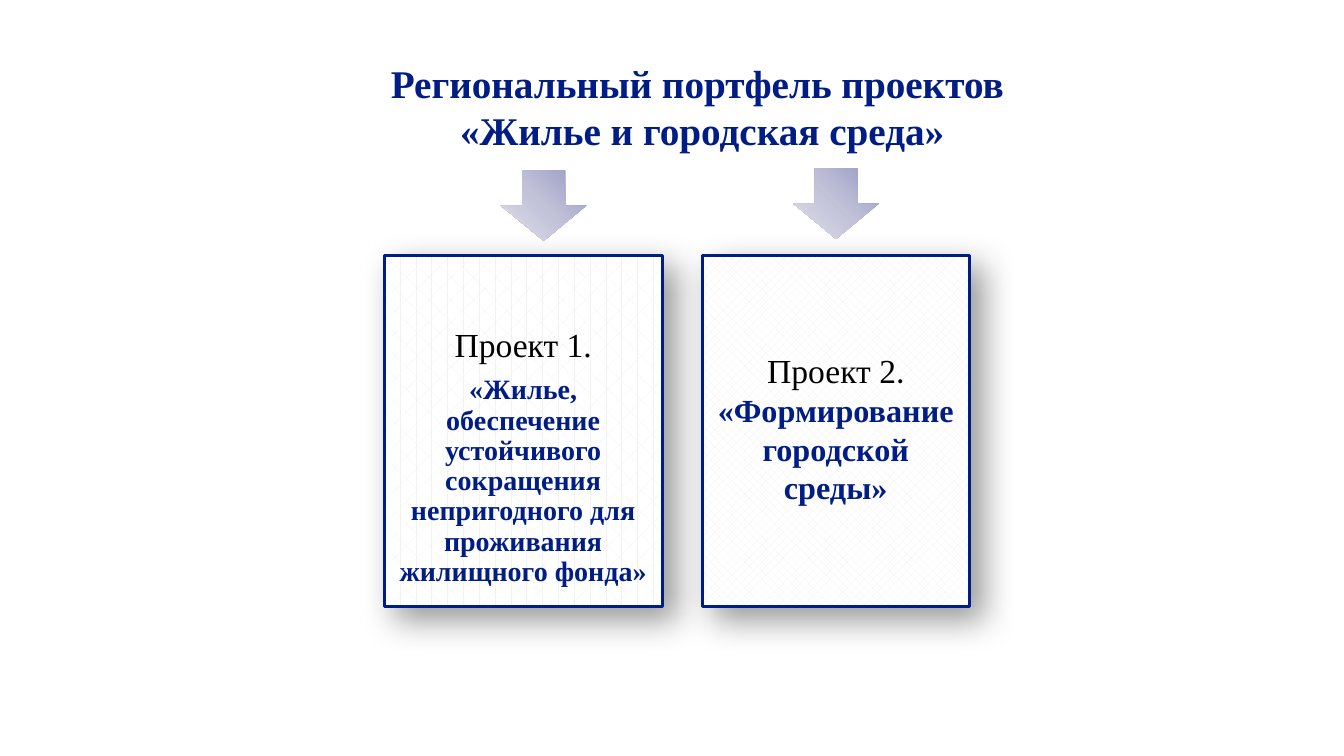
"""Builds the slide on the regional housing project portfolio."""
import copy
import dataclasses

import lxml.etree
import pptx
import pptx.dml.color
import pptx.enum.dml
import pptx.enum.shapes
import pptx.enum.text
import pptx.oxml.ns
import pptx.util

Cm = pptx.util.Cm
Pt = pptx.util.Pt
qn = pptx.oxml.ns.qn
Shapes = pptx.enum.shapes.MSO_SHAPE
Pattern = pptx.enum.dml.MSO_PATTERN
Anchor = pptx.enum.text.MSO_ANCHOR


def rgb(value):
    """Turn a hex string into a colour."""
    return pptx.dml.color.RGBColor.from_string(value)


@dataclasses.dataclass(frozen=True)
class Theme:
    """Colours, fonts and type sizes of the slide."""
    navy: str = "001C85"
    black: str = "000000"
    white: str = "FFFFFF"
    weft: str = "F2F2F2"
    arrow: tuple = ((0, "9799C3"), (0.5, "C1C2D8"), (1, "E1E1EC"))
    serif: str = "Times New Roman"
    sans: str = "Calibri"
    title: int = 28
    label: int = 24


THEME = Theme()
LABEL = {"name": THEME.serif, "size": Pt(THEME.label), "bold": False, "color": THEME.black}
STRONG = {"name": THEME.serif, "bold": True, "color": THEME.navy}


def set_attributes(target, values):
    """Set every attribute named in a dict."""
    for name, value in values.items():
        setattr(target, name, value)


def write_text(frame, paragraphs, **layout):
    """Write centred paragraphs made of (text, font format) spans."""
    for index, spans in enumerate(paragraphs):
        para = frame.paragraphs[0] if index == 0 else frame.add_paragraph()
        set_attributes(para, {"alignment": pptx.enum.text.PP_ALIGN.CENTER, "space_before": Pt(0), **layout})
        for text, font in spans:
            span = para.add_run()
            span.text = text
            set_attributes(span.font, {key: value for key, value in font.items() if key != "color"})
            span.font.color.rgb = rgb(font["color"])


def add_title(page, box, lines):
    """Place the portfolio title in its box."""
    title = page.shapes.title
    set_attributes(title, dict(zip(("left", "top", "width", "height"), map(Cm, box))))
    set_attributes(title.text_frame, {
        "word_wrap": True, "vertical_anchor": Anchor.TOP,
        "auto_size": pptx.enum.text.MSO_AUTO_SIZE.NONE})
    write_text(title.text_frame, [[(line, {**STRONG, "size": Pt(THEME.title)})] for line in lines])


def add_shadow(shape):
    """Give a card its soft shadow to the lower right."""
    shape.shadow.inherit = False
    effects = shape._element.spPr.find(qn("a:effectLst"))
    shadow = lxml.etree.SubElement(
        effects, qn("a:outerShdw"), blurRad=str(Pt(24)), dist=str(Pt(12)),
        dir="2700000", algn="tl", rotWithShape="0")
    color = lxml.etree.SubElement(shadow, qn("a:srgbClr"), val=THEME.black)
    lxml.etree.SubElement(color, qn("a:alpha"), val="40000")


def add_card(page, box, pattern, paragraphs, inset, **layout):
    """Place a patterned project card with its text below a top inset."""
    card = page.shapes.add_shape(Shapes.RECTANGLE, *map(Cm, box))
    card.fill.patterned()
    card.fill.pattern = pattern
    card.fill.fore_color.rgb = rgb(THEME.weft)
    card.fill.back_color.rgb = rgb(THEME.white)
    card.line.color.rgb = rgb(THEME.navy)
    card.line.width = Pt(2.25)
    add_shadow(card)
    set_attributes(card.text_frame, {
        "word_wrap": True, "vertical_anchor": Anchor.TOP, "margin_top": Cm(inset),
        "margin_left": Cm(0.33), "margin_right": Cm(0.33), "margin_bottom": Cm(0.33)})
    write_text(card.text_frame, paragraphs, **layout)


def add_arrow(page, box):
    """Place a gradient arrow pointing down to a card."""
    arrow = page.shapes.add_shape(Shapes.DOWN_ARROW, *map(Cm, box))
    arrow.shadow.inherit = False
    arrow.line.fill.background()
    arrow.fill.gradient()
    arrow.fill.gradient_angle = 225
    stops = arrow._element.spPr.find(".//" + qn("a:gsLst"))
    stops.insert(1, copy.deepcopy(stops[0]))
    for stop, (position, color) in zip(arrow.fill.gradient_stops, THEME.arrow):
        stop.position = position
        stop.color.rgb = rgb(color)


def main():
    """Build and save the deck."""
    deck = pptx.Presentation()
    set_attributes(deck, {"slide_width": Cm(33.87), "slide_height": Cm(19.05)})
    page = deck.slides.add_slide(deck.slide_layouts.get_by_name("Title Only"))
    add_title(page, (3.99, 1.37, 27.41, 2.95),
              ("Региональный портфель проектов ", "«Жилье и городская среда»"))
    card_top, card_height = 6.43, 8.86
    add_card(page, (17.7, card_top, 6.73, card_height), Pattern.WEAVE, [
        [("Проект 2", LABEL), (".", {**LABEL, "name": THEME.sans})],
        [("«Формирование городской среды»", {**STRONG, "size": Pt(23)})],
    ], inset=2.39)
    add_card(page, (9.68, card_top, 7.01, card_height), Pattern.DIVOT, [
        [("Проект 1.", LABEL)],
        [("«Жилье, обеспечение устойчивого сокращения непригодного для проживания жилищного фонда»",
          {**STRONG, "size": Pt(20)})],
    ], inset=1.84, line_spacing=0.9, space_after=Pt(8))
    for left, top in ((12.62, 4.29), (19.99, 4.24)):
        add_arrow(page, (left, top, 2.16, 1.78))
    deck.save("out.pptx")


if __name__ == "__main__":
    main()
